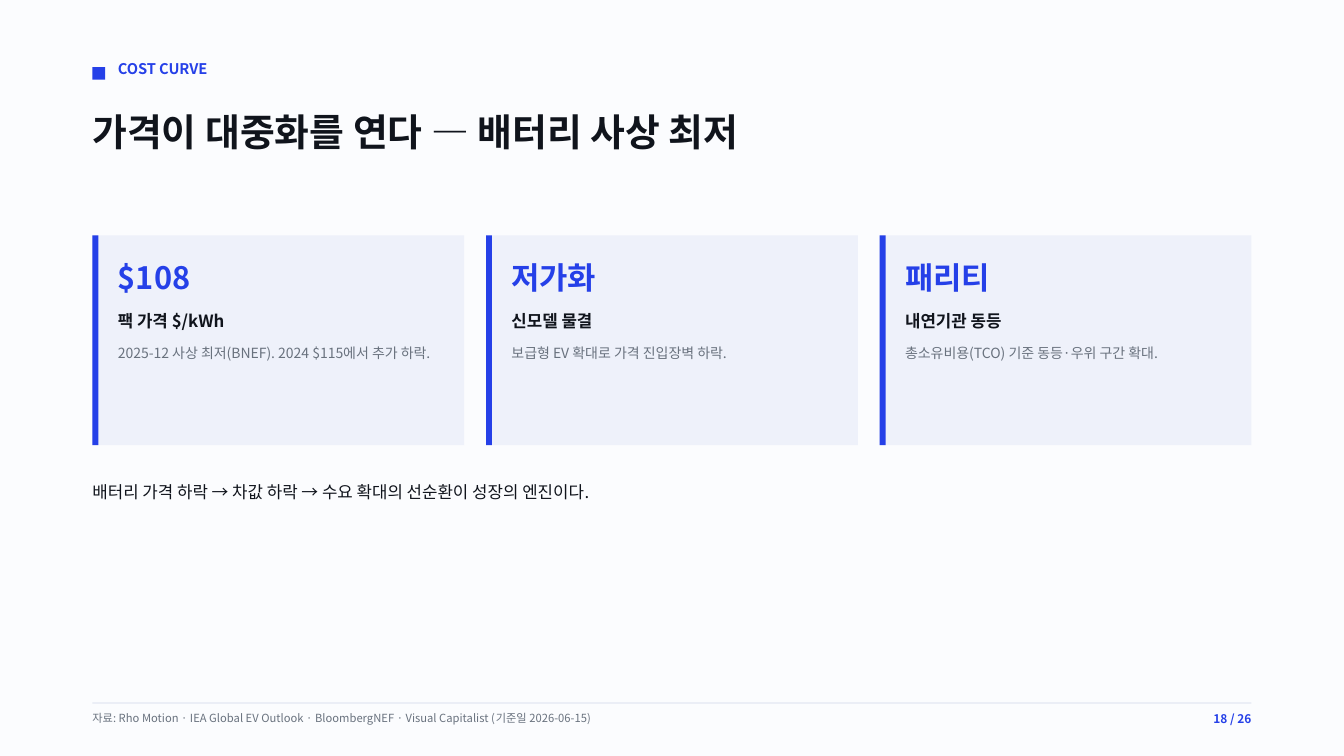
import pptx
import pptx.util
import pptx.dml.color
import pptx.enum.shapes
import pptx.enum.text
import pptx.oxml.ns
import lxml.etree

Cm = pptx.util.Cm
RGBColor = pptx.dml.color.RGBColor
ALIGN = pptx.enum.text.PP_ALIGN

FONT = "Noto Sans CJK KR"
PAPER = RGBColor(0xFB, 0xFC, 0xFE)
BLUE = RGBColor(0x25, 0x40, 0xE8)
INK = RGBColor(0x10, 0x14, 0x1C)
GREY = RGBColor(0x69, 0x72, 0x7E)
CARD = RGBColor(0xEE, 0xF1, 0xFA)
RULE = RGBColor(0xE3, 0xE8, 0xF2)

MARGIN, CONTENT_W = 2.33, 29.21
CARD_GAP = 0.55
CARDS = [
    ("$108", "팩 가격 $/kWh", "2025-12 사상 최저(BNEF). 2024 $115에서 추가 하락."),
    ("저가화", "신모델 물결", "보급형 EV 확대로 가격 진입장벽 하락."),
    ("패리티", "내연기관 동등", "총소유비용(TCO) 기준 동등·우위 구간 확대."),
]


def add_block(s, x, y, w, h, color):
    """Add a plain filled rectangle; lengths in centimetres."""
    sp = s.shapes.add_shape(pptx.enum.shapes.MSO_SHAPE.RECTANGLE,
                            Cm(x), Cm(y), Cm(w), Cm(h))
    sp.shadow.inherit = False
    sp.fill.solid()
    sp.fill.fore_color.rgb = color
    sp.line.fill.background()


def add_text(s, x, y, w, h, text, size, color, bold=False, align=ALIGN.LEFT, wrap=True):
    """Add a one-run text box without insets; lengths in centimetres."""
    tf = s.shapes.add_textbox(Cm(x), Cm(y), Cm(w), Cm(h)).text_frame
    tf.margin_left = tf.margin_top = tf.margin_right = tf.margin_bottom = 0
    tf.word_wrap = wrap
    tf.auto_size = pptx.enum.text.MSO_AUTO_SIZE.SHAPE_TO_FIT_TEXT
    p = tf.paragraphs[0]
    p.alignment = align
    r = p.add_run()
    r.text = text
    r.font.size = pptx.util.Pt(size)
    r.font.bold = bold
    r.font.color.rgb = color
    r.font.name = FONT
    # Hangul takes its typeface from the East Asian slot
    ea = lxml.etree.SubElement(r.font._element, pptx.oxml.ns.qn("a:ea"))
    ea.set("typeface", FONT)


def add_header(s, x, y, w):
    add_block(s, x, y + 0.17, 0.32, 0.32, BLUE)
    add_text(s, x + 0.64, y, 2.31, 0.46, "COST CURVE", 10.5, BLUE, True, wrap=False)
    add_text(s, x, y + 1.22, w, 1.14, "가격이 대중화를 연다 — 배터리 사상 최저", 27, INK, True)


def add_card(s, x, y, w, h, headline, label, detail):
    add_block(s, x, y, w, h, CARD)
    add_block(s, x, y, 0.15, h, BLUE)
    text_x, text_w = x + 0.64, w - 1.14
    add_text(s, text_x, y + 0.58, text_w, 0.94, headline, 22, BLUE, True)
    add_text(s, text_x, y + 1.9, text_w, 0.51, label, 12, INK, True)
    add_text(s, text_x, y + 2.76, text_w, 0.43, detail, 10, GREY)


def add_card_row(s, x, y, w, h):
    card_w = (w - CARD_GAP * (len(CARDS) - 1)) / len(CARDS)
    for i, card in enumerate(CARDS):
        add_card(s, x + i * (card_w + CARD_GAP), y, card_w, h, *card)


def add_footer(s, x, y, w):
    page_w = 2.12
    add_block(s, x, y, w, 0.03, RULE)
    add_text(s, x, y + 0.23, w - page_w, 0.33,
             "자료: Rho Motion · IEA Global EV Outlook · BloombergNEF · "
             "Visual Capitalist (기준일 2026-06-15)", 8, GREY)
    add_text(s, x + w - page_w, y + 0.23, page_w, 0.36, "18 / 26", 8.5, BLUE, True, ALIGN.RIGHT)


def main():
    prs = pptx.Presentation()
    prs.slide_width, prs.slide_height = Cm(33.87), Cm(19.05)
    s = prs.slides.add_slide(prs.slide_layouts[6])
    s.background.fill.solid()
    s.background.fill.fore_color.rgb = PAPER

    add_header(s, MARGIN, 1.52, CONTENT_W)
    add_card_row(s, MARGIN, 5.93, CONTENT_W, 5.29)
    add_text(s, MARGIN, 12.14, CONTENT_W, 0.51,
             "배터리 가격 하락 → 차값 하락 → 수요 확대의 선순환이 성장의 엔진이다.", 12, INK)
    add_footer(s, MARGIN, 17.7, CONTENT_W)
    prs.save("out.pptx")


if __name__ == "__main__":
    main()
